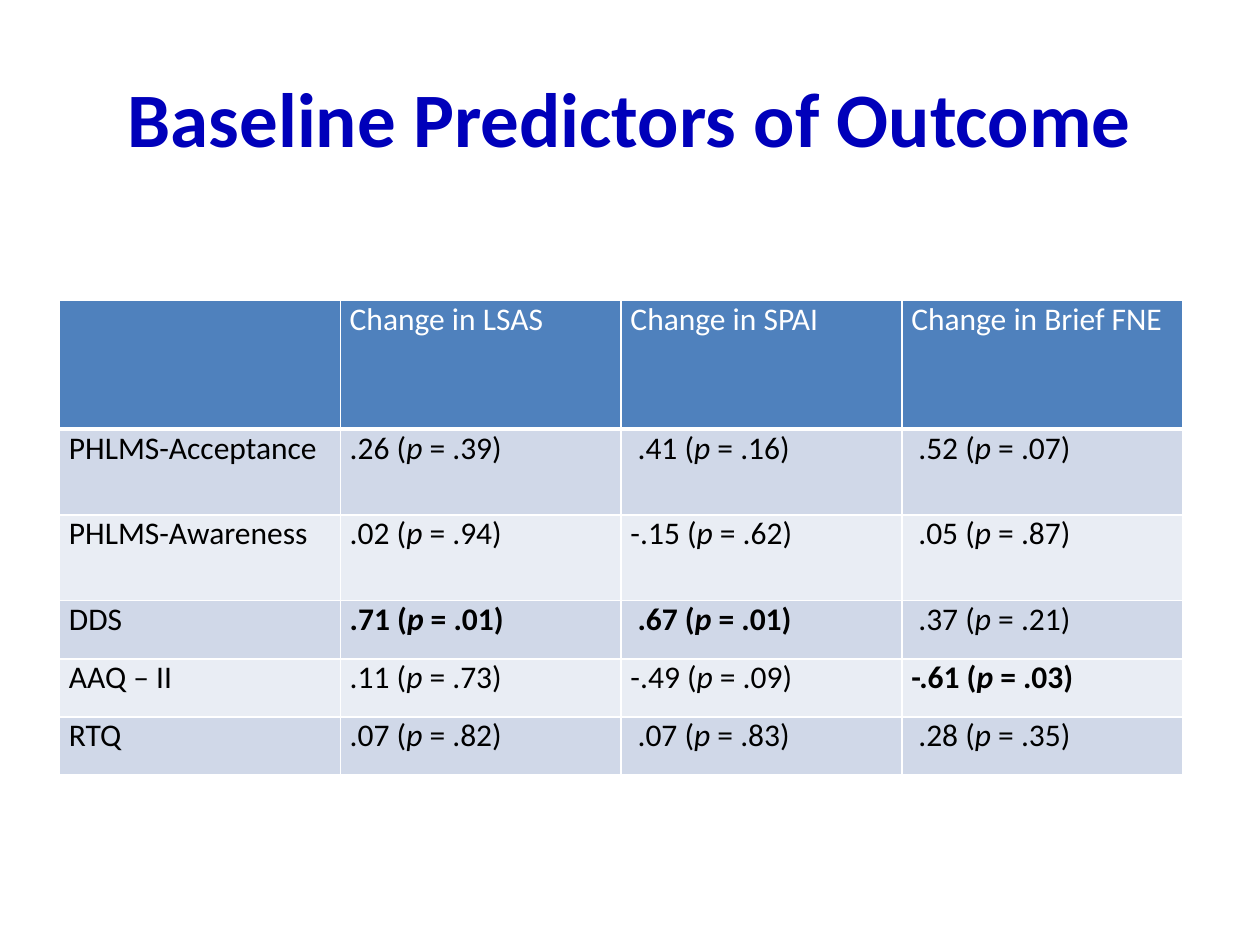
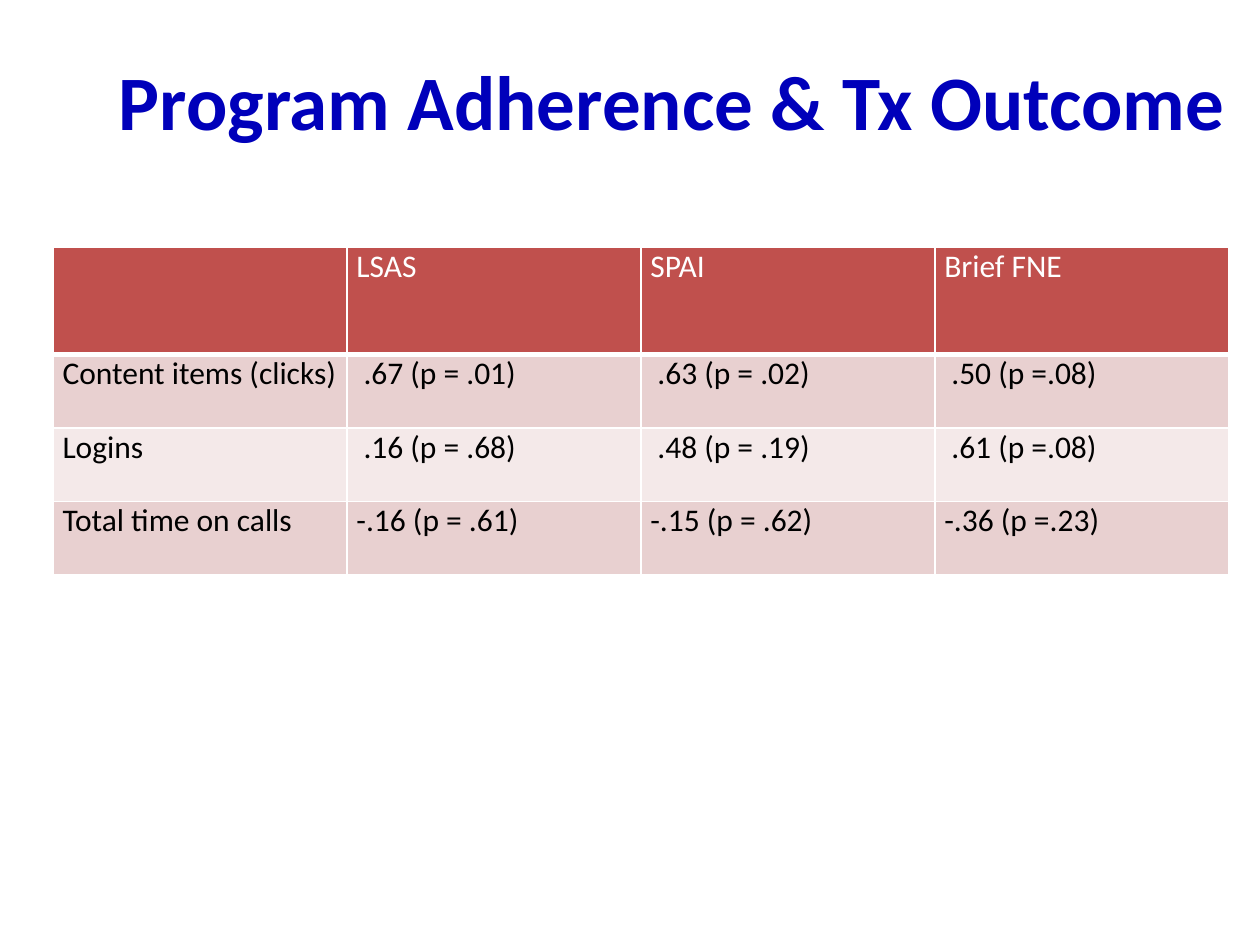
import pptx
import pptx.util
import pptx.dml.color
import pptx.enum.text
import pptx.oxml
import pptx.oxml.ns
from dataclasses import dataclass

Cm = pptx.util.Cm
Pt = pptx.util.Pt


@dataclass(frozen=True)
class Theme:
    font: str = "Calibri"
    title_size: int = 44
    table_size: int = 18
    title: str = "0000BA"
    white: str = "FFFFFF"
    black: str = "000000"
    blue: tuple = ("4F81BD", "D0D8E8", "E9EDF4")  # header, odd row, even row
    red: tuple = ("C0504D", "E8D0D0", "F4E9E9")


theme = Theme()


def write_text(frame, text, size, colour, bold=False, align="LEFT"):
    """Write one paragraph; parts between underscores are italic."""
    para = frame.paragraphs[0]
    para.alignment = getattr(pptx.enum.text.PP_ALIGN, align)
    for index, part in enumerate(text.split("_")):
        span = para.add_run()
        span.text = part
        span.font.name = theme.font
        span.font.size = Pt(size)
        span.font.bold = bold
        span.font.italic = index % 2 == 1
        span.font.color.rgb = pptx.dml.color.RGBColor.from_string(colour)


def add_border(cell, side, width):
    """Give one side of a cell a white line, width in points."""
    line = pptx.oxml.parse_xml(
        f'<a:ln{side} {pptx.oxml.ns.nsdecls("a")} w="{Pt(width)}"><a:solidFill>'
        f'<a:srgbClr val="{theme.white}"/></a:solidFill></a:ln{side}>')
    cell._tc.get_or_add_tcPr().append(line)


# Content: a leading "!" marks a bold cell
pages = [
    dict(
        title="Baseline Predictors of Outcome",
        title_at=(1.27, 0.76, 22.86, 3.18),
        table_at=(1.2, 6.05, 22.64),
        row_heights=[2.6, 1.73, 1.73, 1.17, 1.17, 1.17],
        colours=theme.blue,
        rows=[
            ["", "Change in LSAS", "Change in SPAI", "Change in Brief FNE"],
            ["PHLMS-Acceptance", ".26 (_p_ = .39)", " .41 (_p_ = .16)", " .52 (_p_ = .07)"],
            ["PHLMS-Awareness", ".02 (_p_ = .94)", "-.15 (_p_ = .62)", " .05 (_p_ = .87)"],
            ["DDS", "!.71 (_p_ = .01)", "! .67 (_p_ = .01)", " .37 (_p_ = .21)"],
            ["AAQ – II", ".11 (_p_ = .73)", "-.49 (_p_ = .09)", "!-.61 (_p_ = .03)"],
            ["RTQ", ".07 (_p_ = .82)", " .07 (_p_ = .83)", " .28 (_p_ = .35)"],
        ],
    ),
    dict(
        title="Program Adherence & Tx Outcome",
        title_at=(1.7, 0.64, 23.7, 2.74),
        table_at=(1.07, 4.98, 23.7),
        row_heights=[2.17, 1.48, 1.48, 1.48],
        colours=theme.red,
        rows=[
            ["", "LSAS", "SPAI", "Brief FNE"],
            ["Content items (clicks)", " .67 (p = .01)", " .63 (p = .02)", " .50 (p =.08)"],
            ["Logins", " .16 (p = .68)", " .48 (p = .19)", " .61 (p =.08)"],
            ["Total time on calls", "-.16 (p = .61)", "-.15 (p = .62)", "-.36 (p =.23)"],
        ],
    ),
]

deck = pptx.Presentation()
deck.slide_width, deck.slide_height = Cm(25.4), Cm(19.05)

for content in pages:
    page = deck.slides.add_slide(deck.slide_layouts[6])

    # Title
    box = page.shapes.add_textbox(*map(Cm, content["title_at"]))
    box.text_frame.word_wrap = True
    box.text_frame.vertical_anchor = pptx.enum.text.MSO_ANCHOR.MIDDLE
    write_text(box.text_frame, content["title"], size=theme.title_size,
               colour=theme.title, bold=True, align="CENTER")

    # Table with equal columns
    rows, heights = content["rows"], content["row_heights"]
    left, top, width = content["table_at"]
    table = page.shapes.add_table(len(rows), len(rows[0]), Cm(left), Cm(top),
                                  Cm(width), Cm(sum(heights))).table
    header_fill, *band_fills = content["colours"]

    for row_index, row in enumerate(rows):
        table.rows[row_index].height = Cm(heights[row_index])
        is_header = row_index == 0
        fill = header_fill if is_header else band_fills[(row_index - 1) % 2]
        for column_index, text in enumerate(row):
            cell = table.cell(row_index, column_index)
            cell.margin_left = cell.margin_right = Cm(0.19)
            cell.margin_top = cell.margin_bottom = 0
            for side in "LRTB":
                add_border(cell, side, 3 if is_header and side == "B" else 1)
            cell.fill.solid()
            cell.fill.fore_color.rgb = pptx.dml.color.RGBColor.from_string(fill)
            if text:
                write_text(cell.text_frame, text.removeprefix("!"), size=theme.table_size,
                           colour=theme.white if is_header else theme.black,
                           bold=text.startswith("!"))

deck.save("out.pptx")
